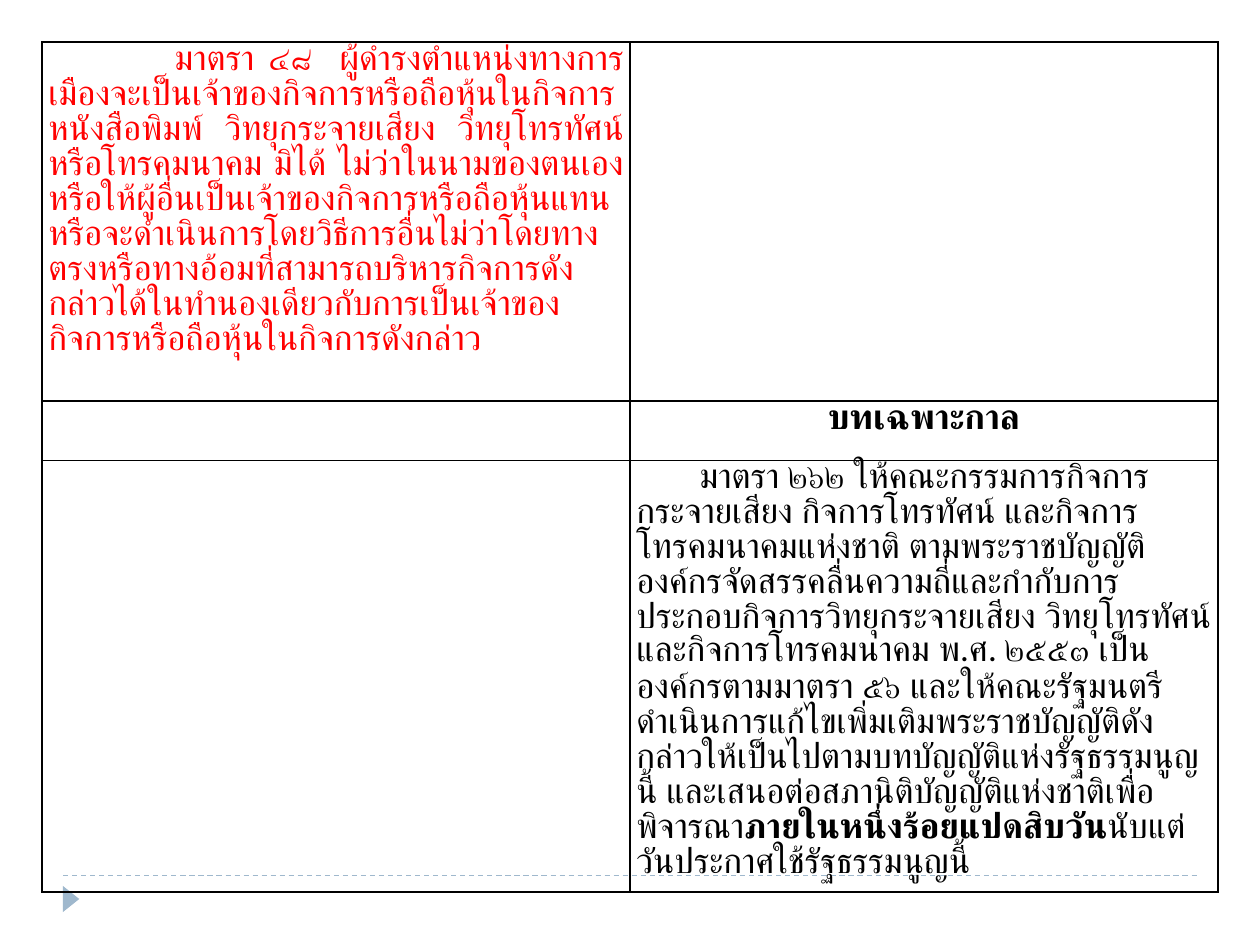
import pptx
import pptx.util
import pptx.dml.color
import pptx.enum.dml
import pptx.enum.lang
import pptx.enum.shapes
import pptx.enum.text
import pptx.oxml
import pptx.oxml.ns
from lxml import etree

Pt = pptx.util.Pt
ALIGN = pptx.enum.text.PP_ALIGN
COLORS = {"accent": "9FB8CD", "red": "FF0000", "black": "000000"}
FONT, SIZE = "Calibri", 20

SECTION_48 = (
    "มาตรา ๔๘  ผู้ดำรงตำแหน่งทางการเมืองจะเป็นเจ้าของกิจการหรือถือหุ้นในกิจการหนังสือพิมพ์ "
    "วิทยุกระจายเสียง วิทยุโทรทัศน์ หรือโทรคมนาคม มิได้ "
    "ไม่ว่าในนามของตนเองหรือให้ผู้อื่นเป็นเจ้าของกิจการหรือถือหุ้นแทน "
    "หรือจะดำเนินการโดยวิธีการอื่นไม่ว่าโดยทางตรงหรือทางอ้อมที่สามารถบริหารกิจการดังกล่าวได้"
    "ในทำนองเดียวกับการเป็นเจ้าของกิจการหรือถือหุ้นในกิจการดังกล่าว"
)
SECTION_262 = (
    "มาตรา ๒๖๒ ให้คณะกรรมการกิจการกระจายเสียง กิจการโทรทัศน์ และกิจการโทรคมนาคมแห่งชาติ "
    "ตามพระราชบัญญัติองค์กรจัดสรรคลื่นความถี่และกำกับการประกอบกิจการวิทยุกระจายเสียง "
    "วิทยุโทรทัศน์และกิจการโทรคมนาคม พ.ศ. ๒๕๕๓ เป็นองค์กรตามมาตรา ๕๖ "
    "และให้คณะรัฐมนตรีดำเนินการแก้ไขเพิ่มเติมพระราชบัญญัติดังกล่าวให้เป็นไปตามบทบัญญัติแห่งรัฐธรรมนูญนี้ "
    "และเสนอต่อสภานิติบัญญัติแห่งชาติเพื่อพิจารณา"
)

# (row, column): alignment, first-line indent, space after, colour, [(text, bold)]
CELLS = {
    (0, 0): (ALIGN.JUSTIFY, 72, 12, "red", [(SECTION_48, False)]),
    (1, 1): (ALIGN.CENTER, 0, 0, "black", [("บทเฉพาะกาล", True)]),
    (2, 1): (ALIGN.LEFT, 36, 12, "black", [
        (SECTION_262, False),
        ("ภายในหนึ่งร้อยแปดสิบวัน", True),
        ("นับแต่วันประกาศใช้รัฐธรรมนูญนี้", False),
    ]),
}
COLUMN_WIDTHS = [336, 336]
ROW_HEIGHTS = [205.2, 34, 246.4]
TABLE_LEFT = TABLE_TOP = 24


def rgb(name):
    return pptx.dml.color.RGBColor.from_string(COLORS[name])


def add_footer_marks(page):
    rule = page.shapes.add_connector(
        pptx.enum.shapes.MSO_CONNECTOR.STRAIGHT, Pt(36), Pt(500.4), Pt(684), Pt(500.4))
    rule.line.color.rgb = rgb("accent")
    rule.line.width = Pt(0.75)
    rule.line.dash_style = pptx.enum.dml.MSO_LINE.DASH
    etree.SubElement(rule.element.spPr, pptx.oxml.ns.qn("a:effectLst"))

    marker = page.shapes.add_shape(
        pptx.enum.shapes.MSO_SHAPE.ISOSCELES_TRIANGLE, Pt(33.1), Pt(509), Pt(15), Pt(9.4))
    marker.rotation = 90
    marker.shadow.inherit = False
    marker.fill.solid()
    marker.fill.fore_color.rgb = rgb("accent")
    marker.line.fill.background()


def style_cell(cell):
    """Clear the fill, set the margins and draw all four borders."""
    cell.margin_left = cell.margin_right = Pt(3.6)
    cell.margin_top = cell.margin_bottom = 0
    cell.fill.background()
    properties = cell._tc.get_or_add_tcPr()
    for position, side in enumerate(("lnL", "lnR", "lnT", "lnB")):
        border = pptx.oxml.parse_xml(
            f'<a:{side} {pptx.oxml.ns.nsdecls("a")} w="{Pt(1)}"><a:solidFill>'
            f'<a:srgbClr val="{COLORS["black"]}"/></a:solidFill></a:{side}>')
        properties.insert(position, border)


def write_cell(cell, align, indent, space_after, color, spans):
    para = cell.text_frame.paragraphs[0]
    para.alignment = align
    para.line_spacing = Pt(SIZE)
    para.space_after = Pt(space_after)
    if indent:
        para._p.get_or_add_pPr().set("indent", str(Pt(indent)))
    for text, bold in spans:
        span = para.add_run()
        span.text = text
        span.font.name = FONT
        span.font.size = Pt(SIZE)
        span.font.bold = bold
        span.font.color.rgb = rgb(color)
        span.font.language_id = pptx.enum.lang.MSO_LANGUAGE_ID.THAI


def add_law_table(page):
    table = page.shapes.add_table(
        len(ROW_HEIGHTS), len(COLUMN_WIDTHS), Pt(TABLE_LEFT), Pt(TABLE_TOP),
        Pt(sum(COLUMN_WIDTHS)), Pt(sum(ROW_HEIGHTS))).table
    table.first_row = table.horz_banding = False
    for column, width in zip(table.columns, COLUMN_WIDTHS):
        column.width = Pt(width)
    for row, height in zip(table.rows, ROW_HEIGHTS):
        row.height = Pt(height)
    for cell in table.iter_cells():
        style_cell(cell)
    for (row, column), content in CELLS.items():
        write_cell(table.cell(row, column), *content)


def main():
    deck = pptx.Presentation()
    deck.slide_width, deck.slide_height = Pt(720), Pt(540)
    page = deck.slides.add_slide(deck.slide_layouts[6])
    add_footer_marks(page)
    add_law_table(page)
    deck.save("out.pptx")


if __name__ == "__main__":
    main()
